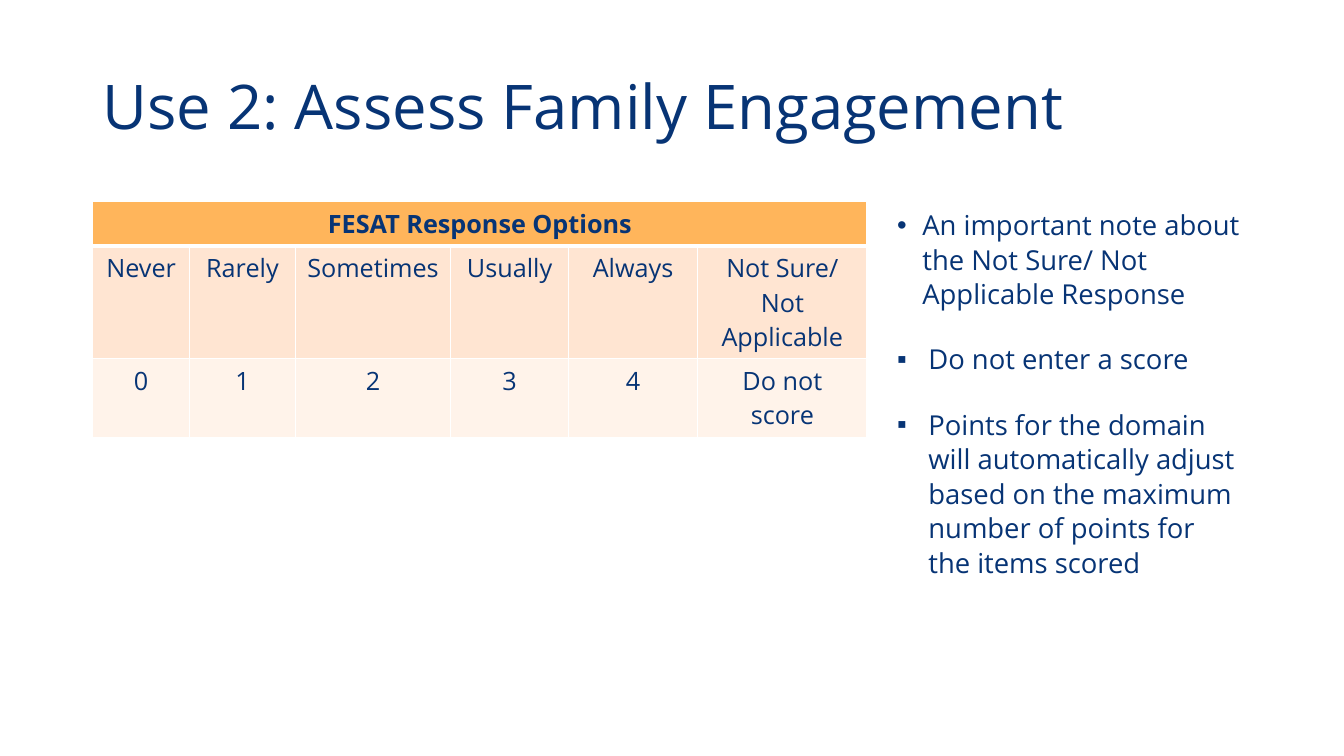
from lxml.etree import SubElement
from pptx import Presentation
from pptx.dml.color import RGBColor
from pptx.enum.text import MSO_ANCHOR, PP_ALIGN
from pptx.oxml.ns import qn
from pptx.util import Inches, Pt

COLORS = {
    "navy": "073475",
    "orange": "FFB55B",
    "peach": "FFE5D2",
    "cream": "FFF3EA",
    "white": "FFFFFF",
}
FONT = "Open Sans"
HEADING = "FESAT Response Options"
RESPONSES = ["Never", "Rarely", "Sometimes", "Usually", "Always", "Not Sure/\nNot Applicable"]
SCORES = ["0", "1", "2", "3", "4", "Do not score"]
COLUMN_WIDTHS = [0.96, 1.05, 1.54, 1.17, 1.28, 1.68]
ROW_HEIGHTS = [0.44, 1.12, 0.78]
NOTES = [
    ("•", 0.25, "An important note about the Not Sure/ Not Applicable Response"),
    ("▪", 0.31, "Do not enter a score"),
    ("▪", 0.31, "Points for the domain will automatically adjust based on "
                "the maximum number of points for the items scored"),
]


def color(name):
    return RGBColor.from_string(COLORS[name])


def style_runs(para, size, bold=False):
    for span in para.runs:
        span.font.name = FONT
        span.font.size = Pt(size)
        span.font.bold = bold
        span.font.color.rgb = color("navy")


def add_text_frame(page, left, top, width, height):
    box = page.shapes.add_textbox(Inches(left), Inches(top), Inches(width), Inches(height))
    box.text_frame.word_wrap = True
    return box.text_frame


def add_title(page, left, top, width, height):
    frame = add_text_frame(page, left, top, width, height)
    frame.vertical_anchor = MSO_ANCHOR.MIDDLE
    frame.text = "Use 2: Assess Family Engagement"
    frame.paragraphs[0].line_spacing = 0.9
    style_runs(frame.paragraphs[0], 44)


def set_bullet(para, symbol, indent):
    properties = para._p.get_or_add_pPr()
    properties.set("marL", str(Inches(indent)))
    properties.set("indent", str(-Inches(indent)))
    SubElement(properties, qn("a:buFont"), typeface="Arial")
    SubElement(properties, qn("a:buChar"), char=symbol)


def add_notes_list(page, left, top, width, height):
    frame = add_text_frame(page, left, top, width, height)
    frame.text = "\n".join(text for _, _, text in NOTES)
    for index, (para, (symbol, indent, _)) in enumerate(zip(frame.paragraphs, NOTES)):
        set_bullet(para, symbol, indent)
        para.line_spacing = 1.05
        para.space_before = Pt(10 if index else 0)
        para.space_after = Pt(12)
        style_runs(para, 19.6)


def set_borders(cell, top, bottom):
    properties = cell._tc.get_or_add_tcPr()
    widths = {"a:lnL": 1, "a:lnR": 1, "a:lnT": top, "a:lnB": bottom}
    for position, (tag, width) in enumerate(widths.items()):
        line = SubElement(properties, qn(tag), w=str(Pt(width)))
        fill = SubElement(line, qn("a:solidFill"))
        SubElement(fill, qn("a:srgbClr"), val=COLORS["white"])
        properties.insert(position, line)


def fill_cell(cell, text, fill, bold):
    cell.text = text
    cell.fill.solid()
    cell.fill.fore_color.rgb = color(fill)
    for para in cell.text_frame.paragraphs:
        para.alignment = PP_ALIGN.CENTER
        style_runs(para, 18, bold)


def add_response_table(page, left, top):
    rows = [([HEADING] + [""] * 5, "orange"), (RESPONSES, "peach"), (SCORES, "cream")]
    table = page.shapes.add_table(
        len(rows), len(COLUMN_WIDTHS), Inches(left), Inches(top),
        Inches(sum(COLUMN_WIDTHS)), Inches(sum(ROW_HEIGHTS))).table
    for column, width in zip(table.columns, COLUMN_WIDTHS):
        column.width = Inches(width)
    for row_index, (texts, fill) in enumerate(rows):
        table.rows[row_index].height = Inches(ROW_HEIGHTS[row_index])
        for column_index, text in enumerate(texts):
            cell = table.cell(row_index, column_index)
            fill_cell(cell, text, fill, bold=row_index == 0)
            set_borders(cell, top=3 if row_index == 1 else 1,
                        bottom=3 if row_index == 0 else 1)
    table.cell(0, 0).merge(table.cell(0, len(COLUMN_WIDTHS) - 1))


def main():
    deck = Presentation()
    deck.slide_width = Inches(13.33)
    deck.slide_height = Inches(7.5)
    page = deck.slides.add_slide(deck.slide_layouts[6])
    add_title(page, 0.92, 0.36, 11.5, 1.45)
    add_notes_list(page, 8.8, 2, 3.61, 4.76)
    add_response_table(page, 0.92, 2)
    deck.save("out.pptx")


if __name__ == "__main__":
    main()
